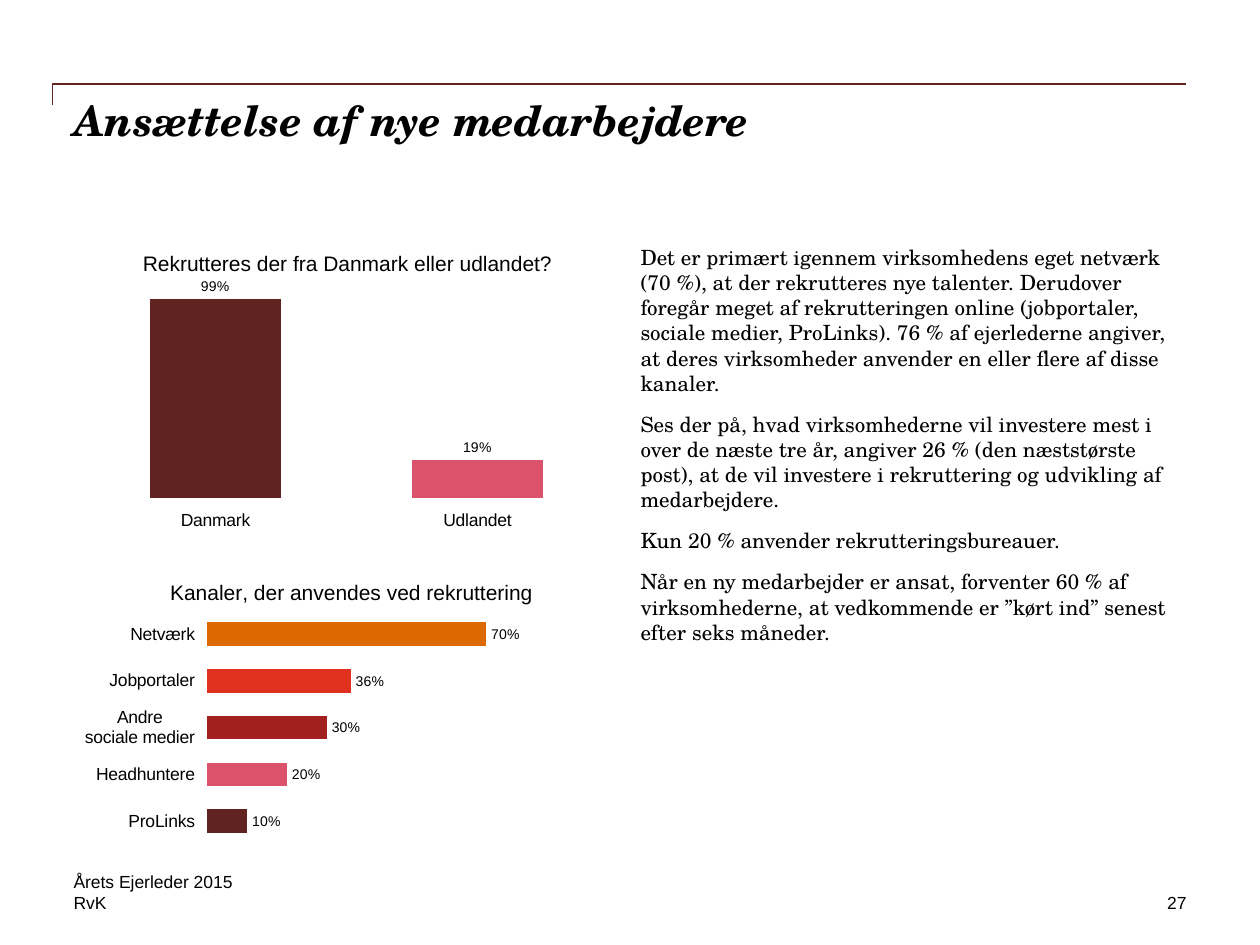
from dataclasses import dataclass

from lxml.etree import SubElement
from pptx import Presentation
from pptx.chart.data import CategoryChartData
from pptx.dml.color import RGBColor
from pptx.enum.chart import XL_CHART_TYPE, XL_LABEL_POSITION
from pptx.enum.text import MSO_ANCHOR, PP_ALIGN
from pptx.oxml.ns import qn
from pptx.util import Pt

SERIF, SANS = "TeX Gyre Schola", "Arial"
BLACK, MAROON, ROSE = "000000", "602320", "DB536A"
LEFT, RIGHT, TOP = 42, 678, 48


@dataclass
class Label:
    lines: list[str]
    box: tuple[float, float, float, float]
    size: float = 10
    face: str = SANS
    bold: bool = False
    align: PP_ALIGN = PP_ALIGN.LEFT
    anchor: MSO_ANCHOR = MSO_ANCHOR.TOP
    after: float = 0


@dataclass
class Bars:
    title: str
    spot: tuple[float, float]
    kind: XL_CHART_TYPE
    top: float
    plot: tuple[float, float, float, float]
    rows: list[tuple[str, float, str]]


LABELS = [
    Label(["Ansættelse af nye medarbejdere"], (LEFT, 54, 636, 72), 24, SERIF, bold=True),
    Label([
        "Det er primært igennem virksomhedens eget netværk \v(70 %), at der rekrutteres "
        "nye talenter. Derudover foregår meget af rekrutteringen online (jobportaler, "
        "sociale medier, ProLinks). 76 % af ejerlederne angiver, at deres virksomheder "
        "anvender en eller flere af disse kanaler.",
        "Ses der på, hvad virksomhederne vil investere mest i over de næste tre år, "
        "angiver 26 % (den næststørste post), at de vil investere i rekruttering og "
        "udvikling af medarbejdere.",
        "Kun 20 % anvender rekrutteringsbureauer.",
        "Når en ny medarbejder er ansat, forventer 60 % af virksomhederne, at "
        "vedkommende er ”kørt ind” senest efter seks måneder.",
    ], (366, 139.7, 312, 346), 12, SERIF, after=9),
    Label(["Årets Ejerleder 2015"], (LEFT, 498, 414, 12), anchor=MSO_ANCHOR.BOTTOM),
    Label(["RvK"], (LEFT, 510, 204, 12)),
    Label(["27"], (558, 510, 120, 12), align=PP_ALIGN.RIGHT),
]

CHARTS = [
    Bars("Rekrutteres der fra Danmark eller udlandet?", (0.12, 0.02),
         XL_CHART_TYPE.COLUMN_CLUSTERED, 138, (0.02, 0.19, 0.96, 0.69),
         [("Danmark", 0.99, MAROON), ("Udlandet", 0.19, ROSE)]),
    Bars("Kanaler, der anvendes ved rekruttering", (0.17, 0.06),
         XL_CHART_TYPE.BAR_CLUSTERED, 319, (0.245, 0.18, 0.73, 0.8),
         [("ProLinks", 0.1, MAROON), ("Headhuntere", 0.2, ROSE),
          ("Andre\nsociale medier", 0.3, "A32020"), ("Jobportaler", 0.36, "E0301E"),
          ("Netværk", 0.7, "DC6900")]),
]


def paint(target, code: str) -> None:
    """Give a fill solid colour; fonts are passed as font.fill."""
    target.solid()
    target.fore_color.rgb = RGBColor.from_string(code)


def style(font, size: float, face: str = SANS, bold: bool = False) -> None:
    font.size, font.name = Pt(size), face
    font.bold = font.italic = bold
    paint(font.fill, BLACK)


def write(slide, label: Label) -> None:
    frame = slide.shapes.add_textbox(*map(Pt, label.box)).text_frame
    frame.word_wrap = True
    frame.vertical_anchor = label.anchor
    frame.margin_left = frame.margin_right = frame.margin_top = frame.margin_bottom = 0
    frame.text = "\n".join(label.lines)
    for para in frame.paragraphs:
        para.alignment = label.align
        para.space_after = Pt(label.after)
        style(para.font, label.size, label.face, label.bold)


def place(node, index: int, box: tuple[float, ...], inner: bool = False) -> None:
    """Fix a chart part in place, as fractions of the chart."""
    for old in node.findall(qn("c:layout")):
        node.remove(old)
    layout = node.makeelement(qn("c:layout"))
    node.insert(index, layout)
    manual = SubElement(layout, qn("c:manualLayout"))
    pairs = [("layoutTarget", "inner")] if inner else []
    pairs += [("xMode", "edge"), ("yMode", "edge"), *zip("xywh", box)]
    for tag, val in pairs:
        SubElement(manual, qn(f"c:{tag}")).set("val", str(val))


def draw(slide, bars: Bars) -> None:
    data = CategoryChartData(number_format="0%")
    data.categories = [name for name, _, _ in bars.rows]
    data.add_series("Series 1", [value for _, value, _ in bars.rows])
    chart = slide.shapes.add_chart(
        bars.kind, Pt(LEFT), Pt(bars.top), Pt(312), Pt(167), data).chart
    style(chart.font, 10)
    chart.has_legend = False
    title = chart.chart_title
    title.text_frame.text = bars.title
    style(title.text_frame.paragraphs[0].font, 12)
    title.include_in_layout = False
    place(title._element, 1, bars.spot)

    chart.category_axis.format.line.fill.background()
    scale = chart.value_axis
    scale.visible = scale.has_major_gridlines = False
    scale.minimum_scale, scale.maximum_scale = 0, 1

    group = chart.plots[0]
    group.gap_width = 100
    group.vary_by_categories = False
    series = group.series[0]
    for index, (_, _, code) in enumerate(bars.rows):
        paint(series.points[index].format.fill, code)
    marks = series.data_labels
    marks.show_value = True
    marks.position = XL_LABEL_POSITION.OUTSIDE_END
    marks.number_format, marks.number_format_is_linked = "0%", False
    style(marks.font, 8)
    place(group._element.getparent(), 0, bars.plot, inner=True)


def rule(slide) -> None:
    """Draw the elbow line above the title."""
    pen = slide.shapes.build_freeform(Pt(30), Pt(TOP + 12))
    pen.add_line_segments([(Pt(30), Pt(TOP)), (Pt(RIGHT), Pt(TOP))], close=False)
    elbow = pen.convert_to_shape()
    elbow.shadow.inherit = False
    elbow.fill.background()
    paint(elbow.line.fill, MAROON)
    elbow.line.width = Pt(1)


def main() -> None:
    deck = Presentation()
    deck.slide_width, deck.slide_height = Pt(720), Pt(540)
    slide = deck.slides.add_slide(deck.slide_layouts[6])
    rule(slide)
    for label in LABELS:
        write(slide, label)
    for bars in CHARTS:
        draw(slide, bars)
    deck.save("out.pptx")


if __name__ == "__main__":
    main()
